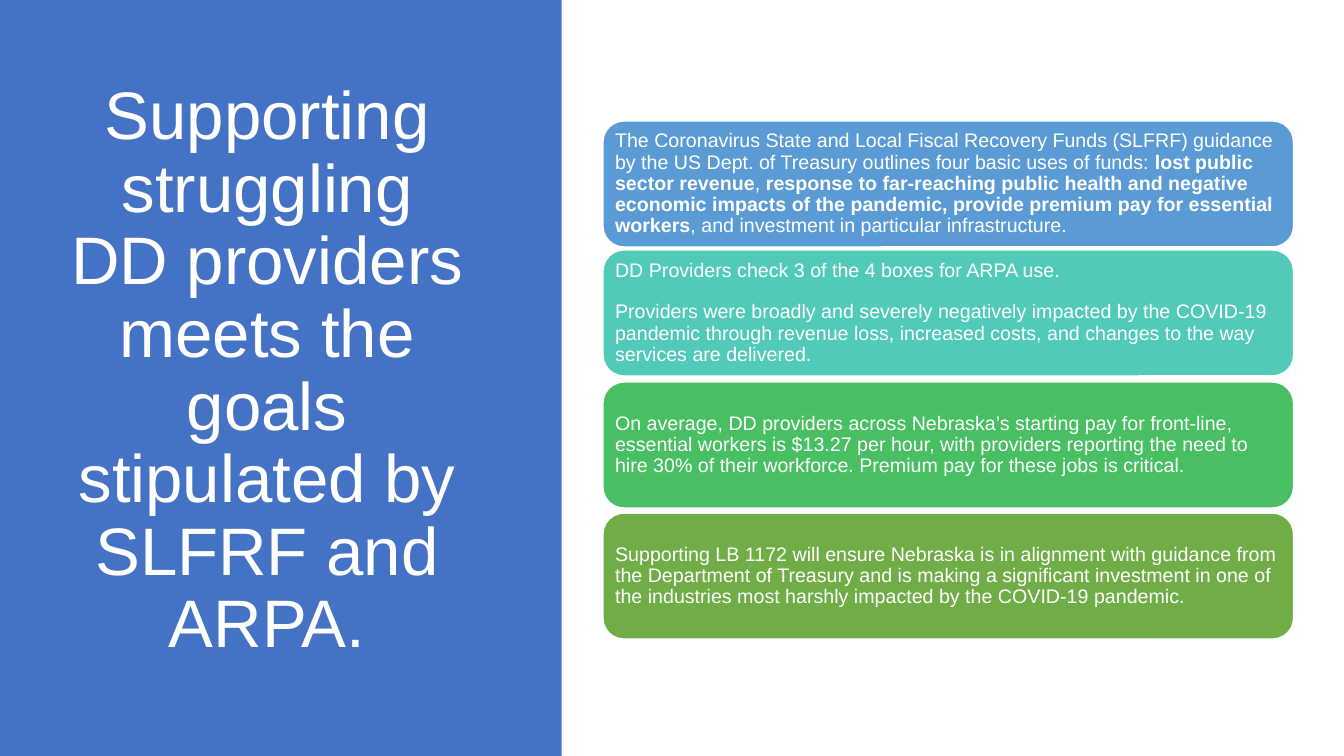
from pptx import Presentation
from pptx.dml.color import RGBColor
from pptx.enum.shapes import MSO_SHAPE as Preset
from pptx.enum.text import MSO_ANCHOR as Anchor, PP_ALIGN as Align
from pptx.util import Inches, Pt

COLORS = {
    "white": "FFFFFF",
    "panel": "4472C4",
    "blue": "5B9BD5",
    "teal": "52CAB8",
    "green": "49BF64",
    "olive": "70AD47",
}
TITLE = "Supporting struggling DD providers meets the goals stipulated by SLFRF and ARPA."
# Each card: top, colour, paragraphs of (text, bold) runs.
CARDS = [
    (1.2, "blue", [[
        ("The Coronavirus State and Local Fiscal Recovery Funds (SLFRF) guidance by the US Dept. "
         "of Treasury outlines four basic uses of funds: ", False),
        ("lost public sector revenue", True),
        (", ", False),
        ("response to far-reaching public health and negative economic impacts of the pandemic, "
         "provide premium pay for essential workers", True),
        (", and investment in particular infrastructure.", False),
    ]]),
    (2.48, "teal", [
        [("DD Providers check 3 of the 4 boxes for ARPA use.", False)],
        [("Providers were broadly and severely negatively impacted by the COVID-19 pandemic through "
          "revenue loss, increased costs, and changes to the way services are delivered.", False)],
    ]),
    (3.79, "green", [[
        ("On average, DD providers across Nebraska’s starting pay for front-line, essential workers "
         "is $13.27 per hour, with providers reporting the need to hire 30% of their workforce. "
         "Premium pay for these jobs is critical.", False),
    ]]),
    (5.09, "olive", [[
        ("Supporting LB 1172 will ensure Nebraska is in alignment with guidance from the Department "
         "of Treasury and is making a significant investment in one of the industries most harshly "
         "impacted by the COVID-19 pandemic.", False),
    ]]),
]


def rgb(name):
    """Return the named colour."""
    return RGBColor.from_string(COLORS[name])


def add_block(slide, preset, box, color):
    """Add a filled shape without shadow or outline."""
    block = slide.shapes.add_shape(preset, *map(Inches, box))
    block.shadow.inherit = False
    block.fill.solid()
    block.fill.fore_color.rgb = rgb(color)
    block.line.fill.background()
    return block


def set_frame(frame, margin_x, margin_y):
    """Wrap and centre a text frame vertically with the given margins."""
    settings = {
        "word_wrap": True,
        "vertical_anchor": Anchor.MIDDLE,
        "margin_left": Inches(margin_x),
        "margin_right": Inches(margin_x),
        "margin_top": Inches(margin_y),
        "margin_bottom": Inches(margin_y),
    }
    for key, value in settings.items():
        setattr(frame, key, value)


def write(paragraph, runs, size, align):
    """Fill a paragraph with white Arial runs."""
    paragraph.alignment = align
    paragraph.line_spacing = 0.9
    for words, bold in runs:
        run = paragraph.add_run()
        run.text = words
        for key, value in {"name": "Arial", "size": Pt(size), "bold": bold}.items():
            setattr(run.font, key, value)
        run.font.color.rgb = rgb("white")


def add_title_panel(slide, left, top, width, height):
    """Draw the coloured side panel with the slide title."""
    add_block(slide, Preset.RECTANGLE, (left, top, width, height), "panel")
    title_box = (left + 0.57, top + 0.68, width - 1.41, height - 1.48)
    title = slide.shapes.add_textbox(*map(Inches, title_box)).text_frame
    set_frame(title, 0.1, 0.05)
    write(title.paragraphs[0], [(TITLE, False)], 48, Align.CENTER)


def add_card(slide, left, top, width, height, color, paragraphs):
    """Draw one rounded card with its statement."""
    card = add_block(slide, Preset.ROUNDED_RECTANGLE, (left, top, width, height), color)
    card.line.color.rgb = rgb("white")
    card.line.width = Pt(1)
    statement = card.text_frame
    set_frame(statement, 0.06, 0.06)
    for index, runs in enumerate(paragraphs):
        paragraph = statement.add_paragraph() if index else statement.paragraphs[0]
        paragraph.space_before = Pt(14.5 if index else 0)
        write(paragraph, runs, 14, Align.LEFT)


def main():
    """Build and save the slide."""
    deck = Presentation()
    deck.slide_width, deck.slide_height = Inches(13.33), Inches(7.5)
    slide = deck.slides.add_slide(deck.slide_layouts[6])
    add_title_panel(slide, 0, 0, 5.57, 7.5)
    for top, color, paragraphs in CARDS:
        add_card(slide, 5.98, top, 6.85, 1.25, color, paragraphs)
    deck.save("out.pptx")


if __name__ == "__main__":
    main()
